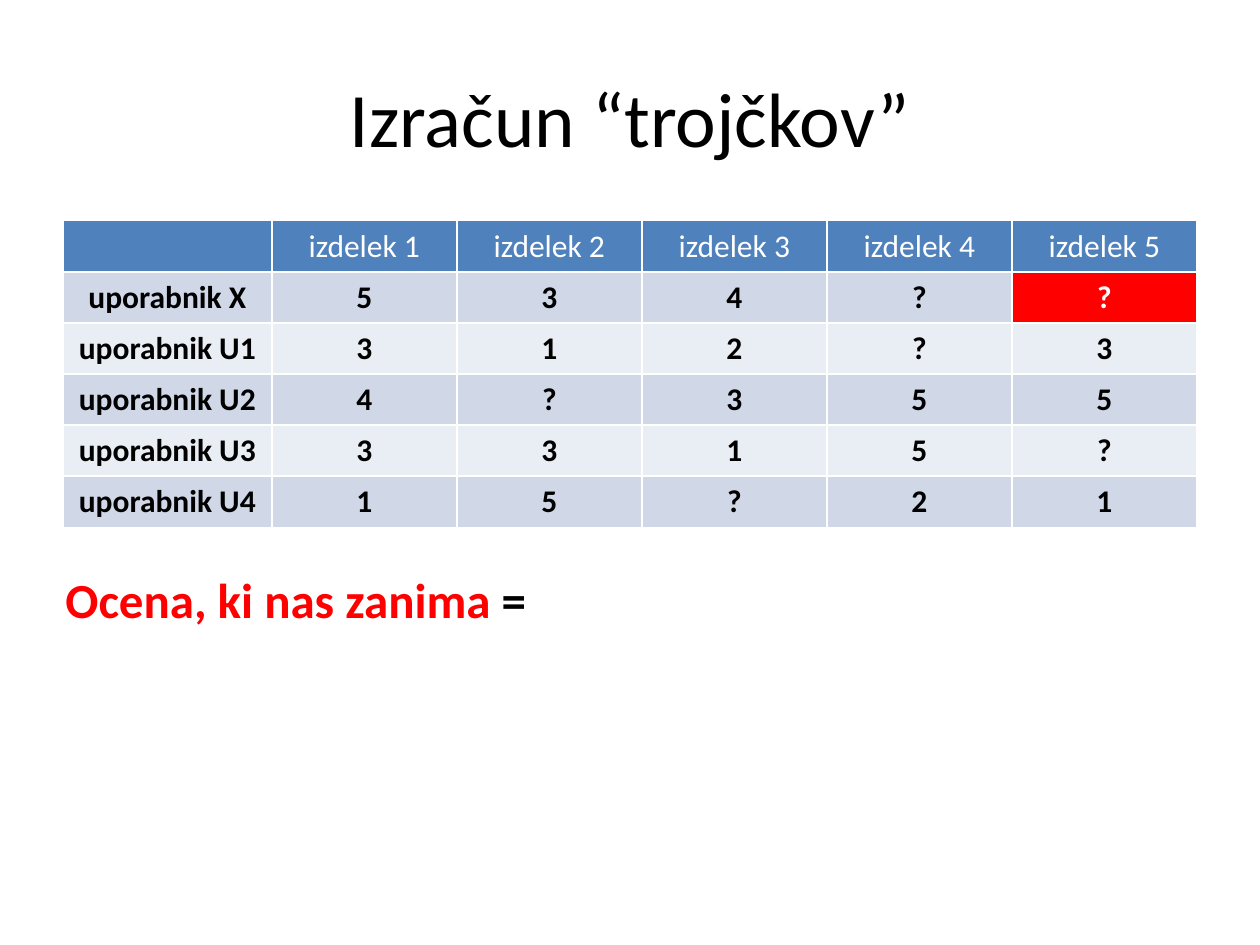
import pptx
import pptx.dml.color
import pptx.enum.text
import pptx.util

Cm = pptx.util.Cm
Pt = pptx.util.Pt
RGBColor = pptx.dml.color.RGBColor
PP_ALIGN = pptx.enum.text.PP_ALIGN

BLACK = RGBColor(0x00, 0x00, 0x00)
WHITE = RGBColor(0xFF, 0xFF, 0xFF)
RED = RGBColor(0xFF, 0x00, 0x00)
HEADER_BLUE = RGBColor(0x4F, 0x81, 0xBD)
BANDS = (RGBColor(0xD0, 0xD8, 0xE8), RGBColor(0xE9, 0xED, 0xF4))

TITLE = "Izračun “trojčkov”"
RATINGS = [
    ("", "izdelek 1", "izdelek 2", "izdelek 3", "izdelek 4", "izdelek 5"),
    ("uporabnik X", "5", "3", "4", "?", "?"),
    ("uporabnik U1", "3", "1", "2", "?", "3"),
    ("uporabnik U2", "4", "?", "3", "5", "5"),
    ("uporabnik U3", "3", "3", "1", "5", "?"),
    ("uporabnik U4", "1", "5", "?", "2", "1"),
]
WANTED_RATING = (1, 5)  # row and column of the rating to predict
FORMULA = [("Ocena, ki nas zanima", RED), (" =", BLACK)]

USER_WIDTH, ITEM_WIDTH, ROW_HEIGHT = 4.21, 3.73, 1.03


def format_run(run, size, color, bold=False):
    run.font.name = "Calibri"
    run.font.size = Pt(size)
    run.font.color.rgb = color
    run.font.bold = bold


def add_text(slide, box, pieces, size, bold=False):
    """Add a text box with one paragraph of (text, colour) pieces."""
    frame = slide.shapes.add_textbox(*map(Cm, box)).text_frame
    frame.word_wrap = True
    for text, color in pieces:
        run = frame.paragraphs[0].add_run()
        run.text = text
        format_run(run, size, color, bold)
    return frame


def cell_colors(row, column):
    """Return the fill and the text colour of a table cell."""
    if row == 0:
        return HEADER_BLUE, WHITE
    if (row, column) == WANTED_RATING:
        return RED, WHITE
    return BANDS[(row - 1) % 2], BLACK


def add_ratings(slide):
    row_count, column_count = len(RATINGS), len(RATINGS[0])
    widths = [USER_WIDTH] + [ITEM_WIDTH] * (column_count - 1)
    ratings = slide.shapes.add_table(
        row_count, column_count, Cm(1.27), Cm(4.45),
        Cm(sum(widths)), Cm(ROW_HEIGHT * row_count)).table
    for column, width in zip(ratings.columns, widths):
        column.width = Cm(width)
    for r, values in enumerate(RATINGS):
        ratings.rows[r].height = Cm(ROW_HEIGHT)
        for c, value in enumerate(values):
            cell = ratings.cell(r, c)
            fill, color = cell_colors(r, c)
            cell.fill.solid()
            cell.fill.fore_color.rgb = fill
            cell.text_frame.text = value
            paragraph = cell.text_frame.paragraphs[0]
            paragraph.alignment = PP_ALIGN.CENTER
            for run in paragraph.runs:
                format_run(run, 18, color, bold=r > 0)


def main():
    presentation = pptx.Presentation()
    presentation.slide_width = Cm(25.4)
    presentation.slide_height = Cm(19.05)
    slide = presentation.slides.add_slide(presentation.slide_layouts[6])

    title = add_text(slide, (1.27, 0.76, 22.86, 3.18), [(TITLE, BLACK)], 44)
    title.vertical_anchor = pptx.enum.text.MSO_ANCHOR.MIDDLE
    title.paragraphs[0].alignment = PP_ALIGN.CENTER

    add_ratings(slide)

    formula = add_text(slide, (1.07, 11.35, 22.86, 2.64), FORMULA, 28, bold=True)
    formula.auto_size = pptx.enum.text.MSO_AUTO_SIZE.SHAPE_TO_FIT_TEXT

    presentation.save("out.pptx")


if __name__ == "__main__":
    main()
